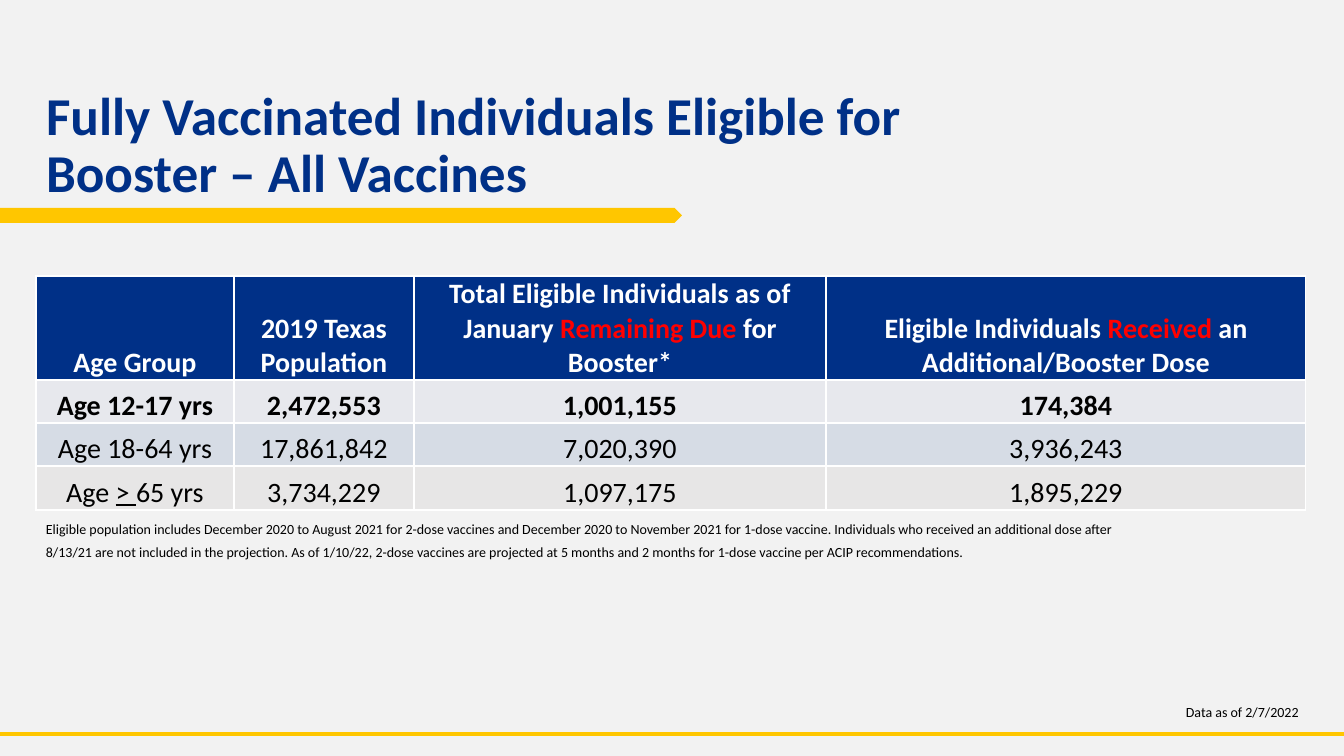
from lxml.etree import SubElement
from pptx import Presentation
from pptx.dml.color import RGBColor
from pptx.enum.shapes import MSO_CONNECTOR as Connector, MSO_SHAPE as Shape
from pptx.enum.text import MSO_ANCHOR as Anchor, MSO_AUTO_SIZE as AutoSize, PP_ALIGN as Align
from pptx.oxml.ns import qn
from pptx.util import Pt

WIDTH, HEIGHT = 1344, 756
SCALE = 12192000 / WIDTH
FONT = "Calibri"

NAVY = RGBColor(0x00, 0x30, 0x87)
GOLD = RGBColor(0xFF, 0xC6, 0x00)
RED = RGBColor(0xFF, 0x00, 0x00)
WHITE = RGBColor(0xFF, 0xFF, 0xFF)
BLACK = RGBColor(0x00, 0x00, 0x00)
PAGE_GRAY = RGBColor(0xF2, 0xF2, 0xF2)
ROW_FILLS = [NAVY, RGBColor(0xE7, 0xE8, 0xED), RGBColor(0xD6, 0xDC, 0xE5), RGBColor(0xE7, 0xE6, 0xE6)]

COLUMN_WIDTHS = [198, 180, 412, 480]
ROW_HEIGHTS = [104, 43, 43, 44]
EDGE_WIDTHS = [1, 1, 1.5, 1.5, 1]
HIGHLIGHTS = {"Remaining Due", "Received "}
UNDERLINED = {"> "}
ROWS = [
    [["Age Group"], ["2019 Texas Population"],
     ["Total Eligible Individuals as of January ", "Remaining Due", " for Booster*"],
     ["Eligible Individuals ", "Received ", "an Additional/Booster Dose"]],
    [["Age 12-17 yrs"], ["2,472,553"], ["1,001,155"], ["174,384"]],
    [["Age 18-64 yrs"], ["17,861,842"], ["7,020,390"], ["3,936,243"]],
    [["Age ", "> ", "65 yrs"], ["3,734,229"], ["1,097,175"], ["1,895,229"]],
]
NOTES = [
    "Eligible population includes December 2020 to August 2021 for 2-dose vaccines and December 2020 "
    "to November 2021 for 1-dose vaccine. Individuals who received an additional dose after",
    "8/13/21 are not included in the projection. As of 1/10/22, 2-dose vaccines are projected at "
    "5 months and 2 months for 1-dose vaccine per ACIP recommendations.",
]


def px(length):
    return round(length * SCALE)


def style(para, size, color, bold=False):
    para.font.name = FONT
    para.font.size = Pt(size)
    para.font.color.rgb = color
    para.font.bold = bold


def set_title(page, text):
    title = page.shapes.title
    title.left, title.top, title.width, title.height = px(36), px(86), px(876), px(122)
    frame = title.text_frame
    frame.text = text
    frame.word_wrap = True
    frame.auto_size = AutoSize.NONE
    frame.vertical_anchor = Anchor.MIDDLE
    para = frame.paragraphs[0]
    para.alignment = Align.LEFT
    para.line_spacing = 0.9
    para.space_before = Pt(0)
    style(para, 38, NAVY, True)


def add_title_bar(page):
    bar = page.shapes.add_shape(Shape.PENTAGON, 0, px(208), px(682), px(15))
    bar.shadow.inherit = False
    bar.fill.solid()
    bar.fill.fore_color.rgb = GOLD
    bar.line.fill.background()


def add_footer_line(page):
    line = page.shapes.add_connector(Connector.STRAIGHT, 0, px(734), px(WIDTH), px(734))
    line.line.color.rgb = GOLD
    line.line.width = Pt(3)
    SubElement(line._element.spPr, qn("a:effectLst"))


def add_text(page, left, top, width, height, lines, **spacing):
    box = page.shapes.add_textbox(px(left), px(top), px(width), px(height))
    frame = box.text_frame
    frame.word_wrap = True
    frame.text = "\n".join(lines)
    for para in frame.paragraphs:
        para.line_spacing = spacing.get("line")
        para.space_after = spacing.get("after")
        style(para, 10, BLACK)


def add_borders(cell, top, bottom):
    properties = cell._tc.get_or_add_tcPr()
    for side, width in (("L", 1), ("R", 1), ("T", top), ("B", bottom)):
        border = SubElement(properties, qn(f"a:ln{side}"), w=str(Pt(width)))
        fill = SubElement(border, qn("a:solidFill"))
        SubElement(fill, qn("a:srgbClr"), val=str(WHITE))


def fill_cell(cell, pieces, row):
    add_borders(cell, EDGE_WIDTHS[row], EDGE_WIDTHS[row + 1])
    cell.fill.solid()
    cell.fill.fore_color.rgb = ROW_FILLS[row]
    cell.vertical_anchor = Anchor.BOTTOM
    cell.margin_left = cell.margin_right = cell.margin_top = px(1)
    cell.margin_bottom = 0
    para = cell.text_frame.paragraphs[0]
    para.alignment = Align.CENTER
    style(para, 20, BLACK if row else WHITE, row < 2)
    for piece in pieces:
        span = para.add_run()
        span.text = piece
        if piece in HIGHLIGHTS:
            span.font.color.rgb = RED
        if piece in UNDERLINED:
            span.font.underline = True


def add_booster_table(page):
    table = page.shapes.add_table(len(ROWS), len(COLUMN_WIDTHS), px(36), px(276),
                                  px(sum(COLUMN_WIDTHS)), px(sum(ROW_HEIGHTS))).table
    for column, width in zip(table.columns, COLUMN_WIDTHS):
        column.width = px(width)
    for row, height in enumerate(ROW_HEIGHTS):
        table.rows[row].height = px(height)
        for column, pieces in enumerate(ROWS[row]):
            fill_cell(table.cell(row, column), pieces, row)


def main():
    deck = Presentation()
    deck.slide_width, deck.slide_height = px(WIDTH), px(HEIGHT)
    page = deck.slides.add_slide(deck.slide_layouts[5])
    page.background.fill.solid()
    page.background.fill.fore_color.rgb = PAGE_GRAY
    add_footer_line(page)
    add_title_bar(page)
    set_title(page, "Fully Vaccinated Individuals Eligible for Booster – All Vaccines")
    add_booster_table(page)
    add_text(page, 1176, 699, 168, 27, ["Data as of 2/7/2022"])
    add_text(page, 36, 517, 1176, 87, NOTES, line=0.9, after=Pt(6))
    deck.save("out.pptx")


if __name__ == "__main__":
    main()
